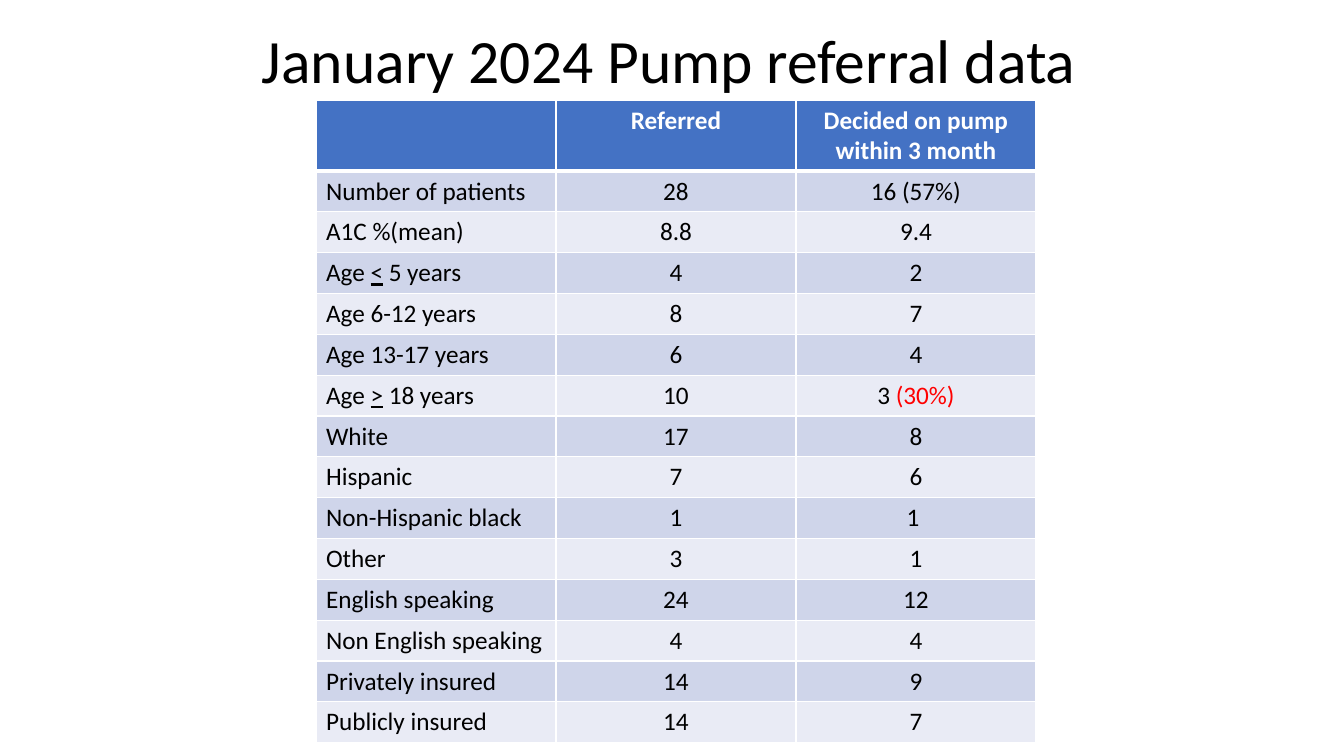
from lxml.etree import SubElement as Sub
from pptx import Presentation
from pptx.dml.color import RGBColor as RGB
from pptx.enum.text import MSO_ANCHOR as Anchor, PP_ALIGN as Align
from pptx.oxml.ns import qn
from pptx.util import Emu, Pt

TITLE = "January 2024 Pump referral data"
HEAD = ("", "Referred", "Decided on pump within 3 month")
# A cell is plain text, or a list of (text, style) runs.
ROWS = [
    ("Number of patients", "28", "16 (57%)"),
    ("A1C %(mean)", "8.8", "9.4"),
    ([("Age ", ""), ("<", "under"), (" 5 years", "")], "4", "2"),
    ("Age 6-12 years", "8", "7"),
    ("Age 13-17 years", "6", "4"),
    ([("Age ", ""), (">", "under"), (" 18 years", "")], "10",
     [("3 ", ""), ("(30%)", "alert")]),
    ("White", "17", "8"),
    ("Hispanic", "7", "6"),
    ("Non-Hispanic black", "1", "1 "),
    ("Other", "3", "1"),
    ("English speaking", "24", "12"),
    ("Non English speaking", "4", "4"),
    ("Privately insured", "14", "9"),
    ("Publicly insured", "14", "7"),
]
COLORS = {"head": "4472C4", "odd": "CFD5EA", "even": "E9EBF5",
          "white": "FFFFFF", "text": "000000", "alert": "FF0000"}
FONT = "Calibri"
TITLE_BOX = (252, -9, 1066, 146)
LEFT, TOP, WIDTH = 316, 100, 720
HEAD_H, BODY_H = 71, 572


def px(n):
    return Emu(round(n * 914400 / 100.8))


def color(name):
    return RGB.from_string(COLORS[name])


def style(par, size, tone, bold=False):
    par.font.name, par.font.size, par.font.bold = FONT, Pt(size), bold
    par.font.color.rgb = color(tone)


def border(cell, side, width):
    line = Sub(cell._tc.get_or_add_tcPr(), qn(f"a:ln{side}"), w=str(Pt(width)))
    fill = Sub(line, qn("a:solidFill"))
    Sub(fill, qn("a:srgbClr"), val=COLORS["white"])


def fill_cell(cell, data, row, col):
    thick = {(0, "B"), (1, "T")}
    for side in "LRTB":
        border(cell, side, 3 if (row, side) in thick else 1)
    cell.fill.solid()
    band = "head" if row == 0 else "odd" if row % 2 else "even"
    cell.fill.fore_color.rgb = color(band)
    par = cell.text_frame.paragraphs[0]
    style(par, 18, "text" if row else "white", row == 0)
    par.alignment = Align.CENTER if col else Align.LEFT
    for text, look in [(data, "")] if isinstance(data, str) else data:
        if not text:
            continue
        run = par.add_run()
        run.text = text
        if look == "under":
            run.font.underline = True
        elif look == "alert":
            run.font.color.rgb = color("alert")


def add_title(slide):
    frame = slide.shapes.add_textbox(*map(px, TITLE_BOX)).text_frame
    frame.word_wrap = True
    frame.vertical_anchor = Anchor.MIDDLE
    par = frame.paragraphs[0]
    par.text = TITLE
    par.line_spacing = 0.9
    style(par, 44, "text")


def add_grid(slide):
    data = [HEAD, *ROWS]
    table = slide.shapes.add_table(
        len(data), len(HEAD), px(LEFT), px(TOP), px(WIDTH), px(HEAD_H + BODY_H)
    ).table
    for col in table.columns:
        col.width = px(WIDTH / len(HEAD))
    for r, cells in enumerate(data):
        table.rows[r].height = px(BODY_H / len(ROWS) if r else HEAD_H)
        for c, item in enumerate(cells):
            fill_cell(table.cell(r, c), item, r, c)


def main():
    deck = Presentation()
    deck.slide_width, deck.slide_height = px(1344), px(756)
    slide = deck.slides.add_slide(deck.slide_layouts[6])
    add_title(slide)
    add_grid(slide)
    deck.save("out.pptx")


if __name__ == "__main__":
    main()
